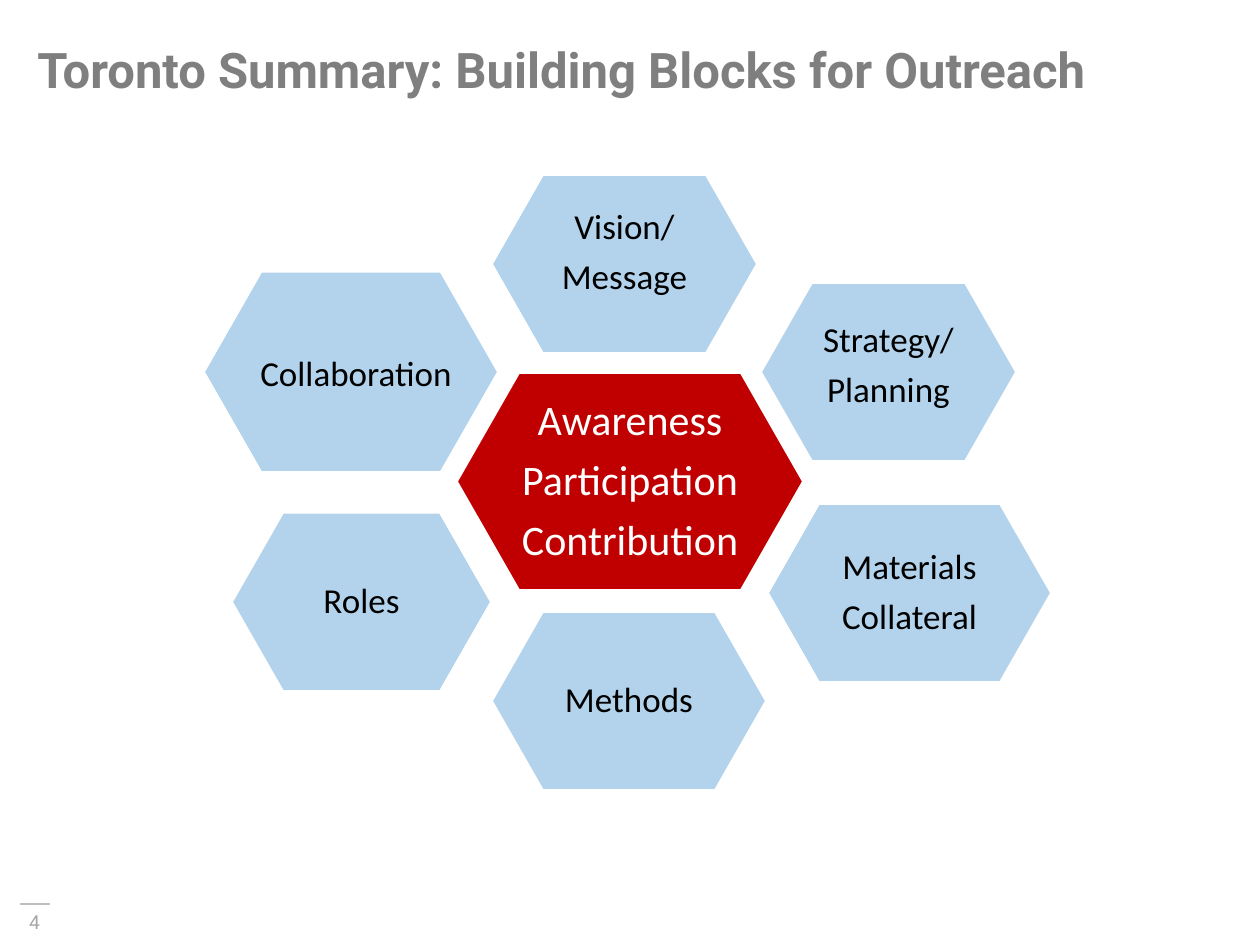
from pptx import Presentation
from pptx.dml.color import RGBColor
from pptx.enum.shapes import MSO_CONNECTOR, MSO_SHAPE
from pptx.enum.text import MSO_ANCHOR as ANCHOR, PP_ALIGN as ALIGN
from pptx.oxml.ns import qn
from pptx.util import Pt
from lxml.etree import SubElement

EMU_PER_PX = 914400 / 126
RED, BLUE, WHITE, BLACK = "C00000", "B2D3EB", "FFFFFF", "000000"


def px(*lengths):
    return [round(n * EMU_PER_PX) for n in lengths]


def rgb(value):
    return RGBColor.from_string(value)


class Deck:
    """Style and drawing methods for the current slide."""

    heading, body = "Roboto", "Calibri"

    def __init__(self, prs):
        self.s = prs.slides.add_slide(prs.slide_layouts[6])

    def text(self, shapes, box, lines, size, color, font, bold=False,
             align=ALIGN.CENTER, spacing=1.0, after=0, inset=None, anchor=ANCHOR.TOP):
        tf = shapes.add_textbox(*px(*box)).text_frame
        tf.word_wrap = True
        tf.vertical_anchor = anchor
        if inset is not None:
            tf.margin_left = tf.margin_top = tf.margin_right = tf.margin_bottom = px(inset)[0]
        tf.text = "\n".join(lines)
        for p in tf.paragraphs:
            p.alignment = align
            p.line_spacing = spacing
            p.space_after = Pt(after)
            for r in p.runs:
                r.font.size = Pt(size)
                r.font.name = font
                r.font.bold = bold
                r.font.color.rgb = rgb(color)

    def line(self, x1, y1, x2, y2, color, width):
        c = self.s.shapes.add_connector(MSO_CONNECTOR.STRAIGHT, *px(x1, y1, x2, y2))
        c.line.color.rgb = rgb(color)
        c.line.width = Pt(width)
        SubElement(c._element.spPr, qn("a:effectLst"))

    def hexagon(self, x, y, w, h, lines, dx=0, dy=0, fill=BLUE, color=BLACK, size=20):
        shapes = self.s.shapes.add_group_shape().shapes
        sp = shapes.add_shape(MSO_SHAPE.HEXAGON, *px(x, y, w, h))
        sp.shadow.inherit = False
        sp.adjustments[0] = 0.286
        sp.fill.solid()
        sp.fill.fore_color.rgb = rgb(fill)
        sp.line.color.rgb = rgb(WHITE)
        sp.line.width = Pt(2)
        label_w, label_h = 0.71 * w, 0.71 * h
        box = (x + (w - label_w) / 2 + dx, y + (h - label_h) / 2 + dy, label_w, label_h)
        self.text(shapes, box, lines, size, color, self.body, spacing=0.9,
                  after=0.35 * size, inset=4, anchor=ANCHOR.MIDDLE)


def main():
    prs = Presentation()
    prs.slide_width, prs.slide_height = px(1260, 945)
    deck = Deck(prs)
    shapes = deck.s.shapes

    deck.line(20, 904, 50, 904, "BFBFBF", 0.75)
    deck.text(shapes, (5, 904, 59, 36), ["4"], 11, "A6A6A6", deck.heading)

    deck.hexagon(456, 372, 348, 219, ["Awareness", "Participation", "Contribution"],
                 fill=RED, color=WHITE, size=24)
    blocks = [
        (491, 174, 267, 180, ["Vision/", "Message"], 0, -11),
        (760, 282, 257, 180, ["Strategy/", "Planning"], 0, -6),
        (767, 503, 285, 180, ["Materials", "Collateral"]),
        (491, 611, 276, 180, ["Methods"]),
        (231, 512, 261, 180, ["Roles"]),
        (203, 271, 296, 202, ["Collaboration"], 5, 3),
    ]
    for block in blocks:
        deck.hexagon(*block)

    deck.text(shapes, (25, 45, 1201, 166), ["Toronto Summary: Building Blocks for Outreach"],
              28, "7F7F7F", deck.heading, bold=True, align=ALIGN.LEFT, spacing=0.8)
    prs.save("out.pptx")


if __name__ == "__main__":
    main()
